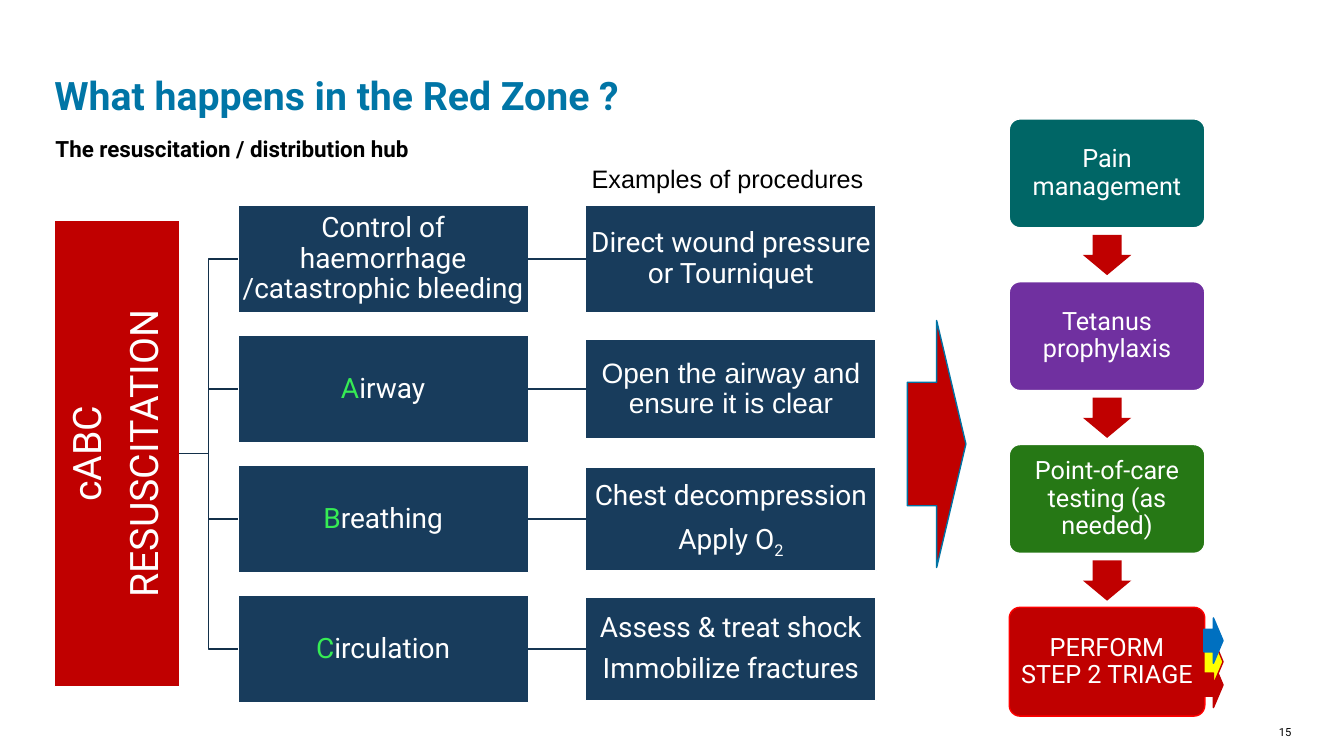
"""Build the Red Zone slide: cABC resuscitation steps leading to step 2 triage."""
from pptx import Presentation
from pptx import util as u
from pptx.dml.color import RGBColor
from pptx.enum import shapes, text
from pptx.oxml.ns import qn
from lxml import etree

colour = RGBColor.from_string
Shape, Align, Anchor = shapes.MSO_SHAPE, text.PP_ALIGN, text.MSO_ANCHOR
WHITE, RED, NAVY, GREEN = "FFFFFF", "C00000", "183C5C", "36EC54"


def add_block(kind, left, top, width, height, fill, line=None):
    """Add a filled shape, outlined when a line colour is given."""
    block = page.shapes.add_shape(kind, *map(u.Inches, (left, top, width, height)))
    block.shadow.inherit = False
    block.fill.solid()
    block.fill.fore_color.rgb = colour(fill)
    if line:
        block.line.color.rgb = colour(line)
        block.line.width = u.Pt(1)
    else:
        block.line.fill.background()
    return block


def write(box, paragraphs, size, ink=WHITE, font="Roboto", bold=False,
          align=Align.CENTER, anchor=Anchor.MIDDLE, spacing=0.9, insets=(0.01,) * 4):
    """Fill a box with paragraphs, in which a bar parts the runs."""
    frame = box.text_frame
    frame.word_wrap = True
    frame.auto_size = text.MSO_AUTO_SIZE.NONE
    frame.vertical_anchor = anchor
    (frame.margin_left, frame.margin_top,
     frame.margin_right, frame.margin_bottom) = map(u.Inches, insets)
    for index, words in enumerate(paragraphs):
        para = frame.add_paragraph() if index else frame.paragraphs[0]
        para.alignment = align
        para.line_spacing = spacing
        if index < len(paragraphs) - 1:
            para.space_after = u.Pt(round(size * 0.37, 1))
        for part in words.split("|"):
            span = para.add_run()
            span.text = part
            span.font.name = font
            span.font.size = u.Pt(size)
            span.font.bold = bold
            span.font.color.rgb = colour(ink)


deck = Presentation()
deck.slide_width, deck.slide_height = u.Inches(13.33), u.Inches(7.5)
page = deck.slides.add_slide(deck.slide_layouts[5])

title = page.shapes.title
title.left, title.top, title.width, title.height = map(u.Inches, (0.52, 0.39, 8.92, 0.79))
write(title, ["What happens in the Red Zone ?"], 28, "0075A6", bold=True,
      align=Align.LEFT, anchor=Anchor.BOTTOM, insets=(0.02, 0, 0.39, 0))

labels = [
    ((0.53, 1.3, 8.92, 0.32), "The resuscitation / distribution hub",
     dict(size=16, bold=True, align=Align.LEFT, spacing=1.1, insets=(0.02, 0, 0.02, 0))),
    ((5.77, 1.57, 2.92, 0.4), "Examples of procedures",
     dict(size=18, font="Arial", align=Align.LEFT, anchor=Anchor.TOP, spacing=1,
          insets=(0.1, 0.05, 0.1, 0.05))),
    ((12.49, 7.2, 0.32, 0.2), "15",
     dict(size=8, align=Align.RIGHT, anchor=Anchor.TOP, spacing=1, insets=(0,) * 4)),
]
for place, words, style in labels:
    label = page.shapes.add_textbox(*map(u.Inches, place))
    write(label, [words], ink="000000", **style)

hub = add_block(Shape.RECTANGLE, -1.15, 3.88, 4.62, 1.24, RED, WHITE)
hub.rotation = 270
write(hub, ["cABC", "RESUSCITATION"], 28, insets=(0.02,) * 4)

steps = [
    ("Control of haemorrhage /catastrophic bleeding",
     ["Direct wound pressure or Tourniquet"], 1.06, "Roboto"),
    ("A|irway", ["Open the airway and ensure it is clear"], 0.98, "Arial"),
    ("B|reathing", ["Chest decompression", "Apply O|2"], 1.02, "Roboto"),
    ("C|irculation", ["Assess & treat shock", "Immobilize fractures"], 1.02, "Roboto"),
]
links = []
for row, (step_words, procedure_words, height, font) in enumerate(steps):
    middle = 2.57 + 1.29 * row
    step = add_block(Shape.RECTANGLE, 2.36, middle - 0.53, 2.88, 1.06, NAVY, WHITE)
    write(step, [step_words], 20)
    runs = step.text_frame.paragraphs[0].runs
    if len(runs) > 1:
        runs[0].font.color.rgb = colour(GREEN)
    procedure = add_block(Shape.RECTANGLE, 5.81, middle - height / 2, 2.88, height, NAVY, WHITE)
    write(procedure, procedure_words, 20, font=font)
    for para in procedure.text_frame.paragraphs:
        for subscript in para.runs[1:]:
            subscript.font._element.set("baseline", "-25000")

    branch = page.shapes.add_connector(
        shapes.MSO_CONNECTOR.ELBOW, *map(u.Inches, (1.78, 4.5, 2.36, middle)))
    link = page.shapes.add_connector(
        shapes.MSO_CONNECTOR.STRAIGHT, *map(u.Inches, (5.24, middle, 5.81, middle)))
    link.begin_connect(step, 3)
    link.end_connect(procedure, 1)
    links += [(branch, "13304A"), (link, "163653")]

for link, ink in links:
    link.line.color.rgb = colour(ink)
    link.line.width = u.Pt(1)
    etree.SubElement(link._element.spPr, qn("a:effectLst"))

add_block(Shape.RIGHT_ARROW, 9, 3.18, 0.58, 2.45, RED, "0073A4")

stages = [
    ("Pain management", "006666", WHITE),
    ("Tetanus prophylaxis", "7030A0", WHITE),
    ("Point-of-care testing (as needed)", "267815", WHITE),
    ("PERFORM STEP 2 TRIAGE", RED, "FF0000"),
]
for row, (words, fill, line) in enumerate(stages):
    top = 1.18 + 1.615 * row
    stage = add_block(Shape.ROUNDED_RECTANGLE, 10.01, top, 1.94, 1.08, fill, line)
    stage.adjustments[0] = 0.1
    write(stage, [words], 18, insets=(0.07,) * 4)
    if row < len(stages) - 1:
        arrow = add_block(Shape.DOWN_ARROW, 10.74, top + 1.15, 0.48, 0.4, RED)
        arrow.adjustments[0] = 0.6

for top, fill, line in [(6.57, RED, RED), (6.34, "FFFF00", RED), (6.13, "0070C0", "0070C0")]:
    add_block(Shape.RIGHT_ARROW, 11.94, top, 0.19, 0.45, fill, line)

deck.save("out.pptx")
